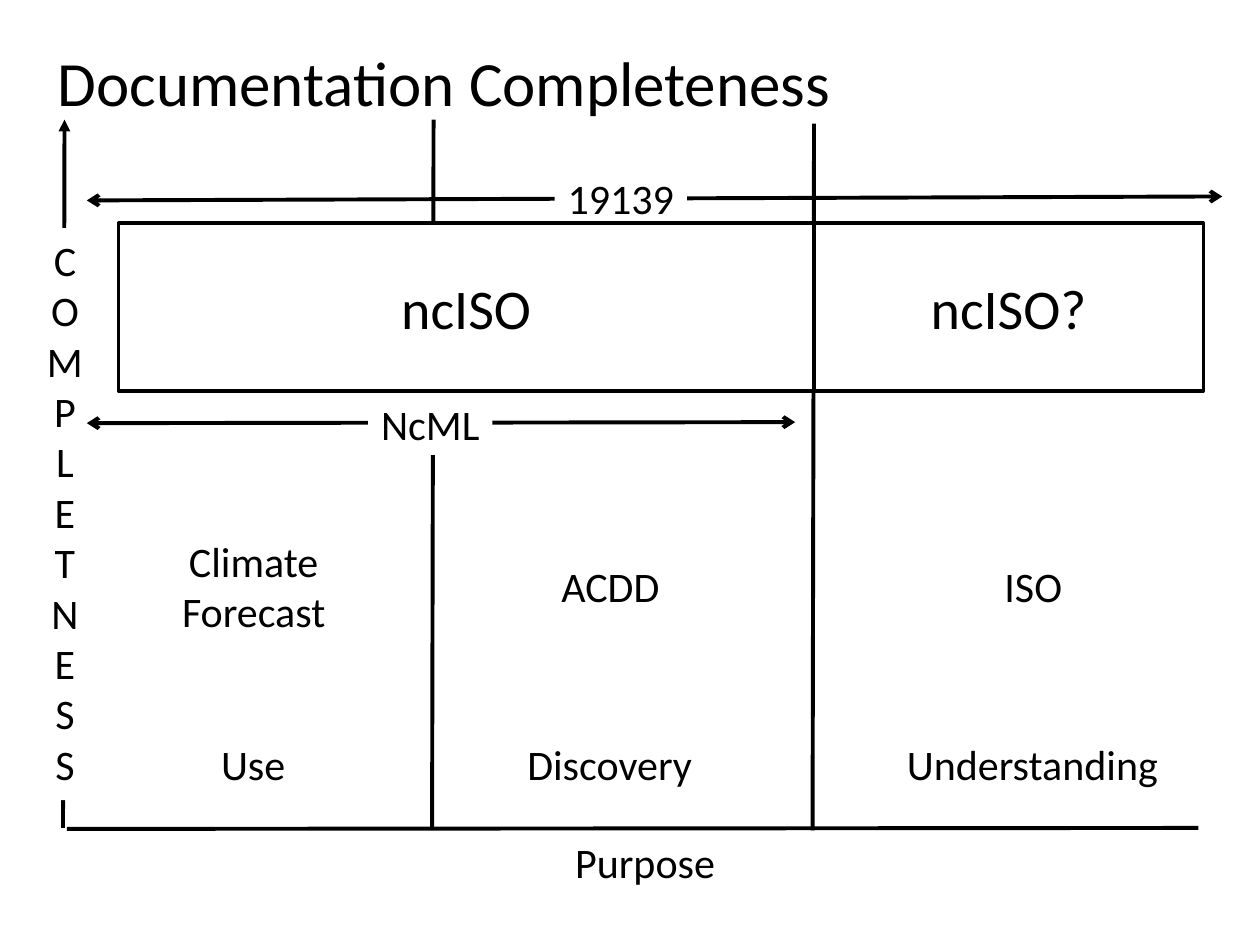
"""Build a slide that charts documentation completeness against purpose."""
from lxml.etree import SubElement
from pptx import Presentation
from pptx.dml.color import RGBColor
from pptx.enum.shapes import MSO_CONNECTOR as Connector, MSO_SHAPE as Shape
from pptx.enum.text import MSO_ANCHOR as Anchor, MSO_AUTO_SIZE as AutoSize, PP_ALIGN as Align
from pptx.oxml.ns import qn
from pptx.util import Cm, Pt

BLACK, WHITE = "000000", "FFFFFF"
LINE_HEIGHT = 1.27


def color(value):
    return RGBColor.from_string(value)


class Diagram:
    def __init__(self, page, font="Calibri"):
        self.page = page
        self.font = font

    def set_text(self, shape, lines, size, align=Align.CENTER):
        frame = shape.text_frame
        frame.text = "\n".join(lines)
        for para in frame.paragraphs:
            para.alignment = align
            para.font.name = self.font
            para.font.size = Pt(size)
            para.font.color.rgb = color(BLACK)
        return frame

    def title(self, text, *place):
        holder = self.page.shapes.title
        holder.left, holder.top, holder.width, holder.height = map(Cm, place)
        frame = self.set_text(holder, [text], 36, Align.LEFT)
        frame.vertical_anchor = Anchor.MIDDLE

    def line(self, start, end, head=None, tail=None):
        connector = self.page.shapes.add_connector(
            Connector.STRAIGHT, *map(Cm, start + end))
        connector.line.color.rgb = color(BLACK)
        connector.line.width = Pt(2.25)
        properties = connector._element.spPr
        outline = properties.find(qn("a:ln"))
        for tag, kind in (("a:headEnd", head), ("a:tailEnd", tail)):
            if kind:
                SubElement(outline, qn(tag), type=kind)
        SubElement(properties, qn("a:effectLst"))

    def label(self, lines, left, top, width, height=LINE_HEIGHT, filled=False):
        box = self.page.shapes.add_textbox(*map(Cm, (left, top, width, height)))
        if filled:
            box.fill.solid()
            box.fill.fore_color.rgb = color(WHITE)
        frame = self.set_text(box, lines, 24)
        frame.word_wrap = False
        frame.auto_size = AutoSize.SHAPE_TO_FIT_TEXT

    def block(self, text, *place):
        box = self.page.shapes.add_shape(Shape.RECTANGLE, *map(Cm, place))
        box.shadow.inherit = False
        box.fill.solid()
        box.fill.fore_color.rgb = color(WHITE)
        box.line.color.rgb = color(BLACK)
        box.line.width = Pt(2)
        self.set_text(box, [text], 32).vertical_anchor = Anchor.MIDDLE

    def span(self, text, start, end, left, top, width):
        self.line(start, end, head="arrow", tail="arrow")
        self.label([text], left, top, width, filled=True)


def main():
    deck = Presentation()
    deck.slide_width, deck.slide_height = Cm(25.4), Cm(19.05)
    diagram = Diagram(deck.slides.add_slide(deck.slide_layouts[5]))

    diagram.title("Documentation Completeness", 0.91, 0.58, 17.63, 2.11)
    diagram.line((1.35, 16.71), (24.16, 16.69))
    diagram.label(["Purpose"], 11.33, 16.74, 3.35)
    diagram.line((1.27, 16.69), (1.3, 2.41), tail="triangle")
    diagram.label("COMPLETNESS", 0.69, 4.6, 1.24, 11.53, filled=True)

    diagram.line((8.71, 16.69), (8.74, 2.41))
    diagram.line((16.38, 16.74), (16.41, 2.49))
    for purpose, left, width in (
            ("Use", 4.19, 1.83), ("Discovery", 10.36, 3.86), ("Understanding", 18.01, 5.61)):
        diagram.label([purpose], left, 14.76, width)

    diagram.label(["Climate", "Forecast"], 3.4, 10.67, 3.43, 2.31)
    for standard, left, width in (("ACDD", 11.05, 2.51), ("ISO", 19.99, 1.68)):
        diagram.label([standard], left, 11.18, width)

    diagram.span("NcML", (1.75, 8.53), (16.03, 8.51), 7.42, 7.9, 2.51)
    diagram.span("19139", (1.75, 4.04), (24.64, 3.96), 11.18, 3.35, 2.67)
    for text, left, width in (("ncISO", 2.39, 14.02), ("ncISO?", 16.41, 7.85)):
        diagram.block(text, left, 4.5, width, 3.38)

    deck.save("out.pptx")


if __name__ == "__main__":
    main()
